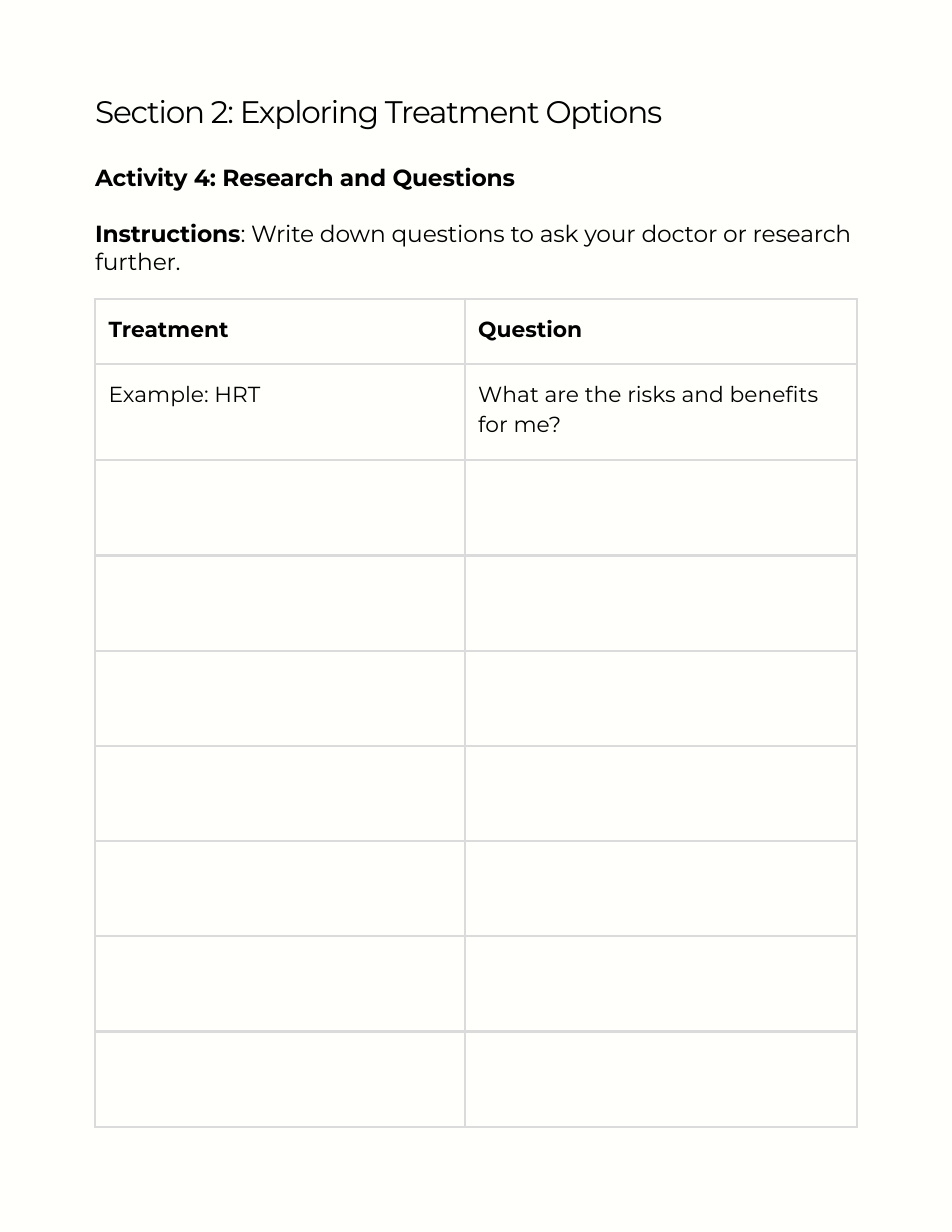
from dataclasses import dataclass

from lxml import etree
from pptx import Presentation, util as u
from pptx.dml.color import RGBColor
from pptx.oxml import ns


@dataclass(frozen=True)
class Theme:
    font: str = "Montserrat"
    ink: str = "000000"
    paper: str = "FFFFFC"
    rule: str = "DBDBDB"
    edge: float = 1.5
    title: float = 20
    lead: float = 15
    cell: float = 14


@dataclass(frozen=True)
class Span:
    words: str
    bold: bool = False


@dataclass(frozen=True)
class Line:
    spans: tuple[Span, ...]
    size: float
    pitch: float = 18
    track: float = 0
    gap: float = 0


THEME = Theme()
LEFT, WIDTH = 0.85, 6.8
COLS = (3.3, 3.5)
ROWS = (0.58, 0.86) + (0.85,) * 7
PAD = 0.12
CELLS = (
    (Span("Treatment", True), Span("Question", True)),
    (Span("Example: HRT"), Span("What are the risks and benefits for me?")),
)
TITLE = (Line((Span("Section 2: Exploring Treatment Options"),), THEME.title, track=-0.8),)
INTRO = (
    Line((Span("Activity 4: Research and Questions", True),), THEME.lead, track=-0.1),
    Line(
        (
            Span("Instructions", True),
            Span(": Write down questions to ask your doctor or research further."),
        ),
        THEME.lead,
        track=-0.1,
        gap=18,
    ),
)


def write(frame, lines: tuple[Line, ...]) -> None:
    for i, line in enumerate(lines):
        para = frame.add_paragraph() if i else frame.paragraphs[0]
        para.line_spacing = u.Pt(line.pitch)
        para.space_before = u.Pt(line.gap)
        font = para.font
        font.name, font.size = THEME.font, u.Pt(line.size)
        font.color.rgb = RGBColor.from_string(THEME.ink)
        for span in line.spans:
            run = para.add_run()
            run.text, run.font.bold = span.words, span.bold
            if line.track:
                run._r.get_or_add_rPr().set("spc", str(round(line.track * 100)))


def add_text(slide, top: float, high: float, lines: tuple[Line, ...]) -> None:
    box = slide.shapes.add_textbox(
        u.Inches(LEFT), u.Inches(top), u.Inches(WIDTH), u.Inches(high)
    )
    frame = box.text_frame
    frame.word_wrap = True
    frame.margin_left = frame.margin_right = 0
    frame.margin_top = frame.margin_bottom = 0
    write(frame, lines)


def rule_cell(cell) -> None:
    props = cell._tc.get_or_add_tcPr()
    for i, side in enumerate(("a:lnL", "a:lnR", "a:lnT", "a:lnB")):
        edge = etree.Element(ns.qn(side), w=str(int(u.Pt(THEME.edge))))
        fill = etree.SubElement(edge, ns.qn("a:solidFill"))
        etree.SubElement(fill, ns.qn("a:srgbClr"), val=THEME.rule)
        props.insert(i, edge)


def add_grid(slide, top: float) -> None:
    grid = slide.shapes.add_table(
        len(ROWS), len(COLS), u.Inches(LEFT), u.Inches(top),
        u.Inches(WIDTH), u.Inches(sum(ROWS)),
    ).table
    grid.first_row = grid.horz_banding = False
    for col, wide in zip(grid.columns, COLS):
        col.width = u.Inches(wide)
    for row, high in zip(grid.rows, ROWS):
        row.height = u.Inches(high)
    for cell in grid.iter_cells():
        cell.fill.background()
        cell.margin_left = cell.margin_right = u.Inches(PAD)
        cell.margin_top = cell.margin_bottom = u.Inches(PAD)
        rule_cell(cell)
    for r, row in enumerate(CELLS):
        for c, span in enumerate(row):
            write(grid.cell(r, c).text_frame, (Line((span,), THEME.cell, 19.6),))


def main() -> None:
    deck = Presentation()
    deck.slide_width, deck.slide_height = u.Inches(8.5), u.Inches(11)
    slide = deck.slides.add_slide(deck.slide_layouts[6])
    back = slide.background.fill
    back.solid()
    back.fore_color.rgb = RGBColor.from_string(THEME.paper)
    add_text(slide, 0.91, 0.27, TITLE)
    add_text(slide, 1.46, 0.93, INTRO)
    add_grid(slide, 2.67)
    deck.save("out.pptx")


if __name__ == "__main__":
    main()
